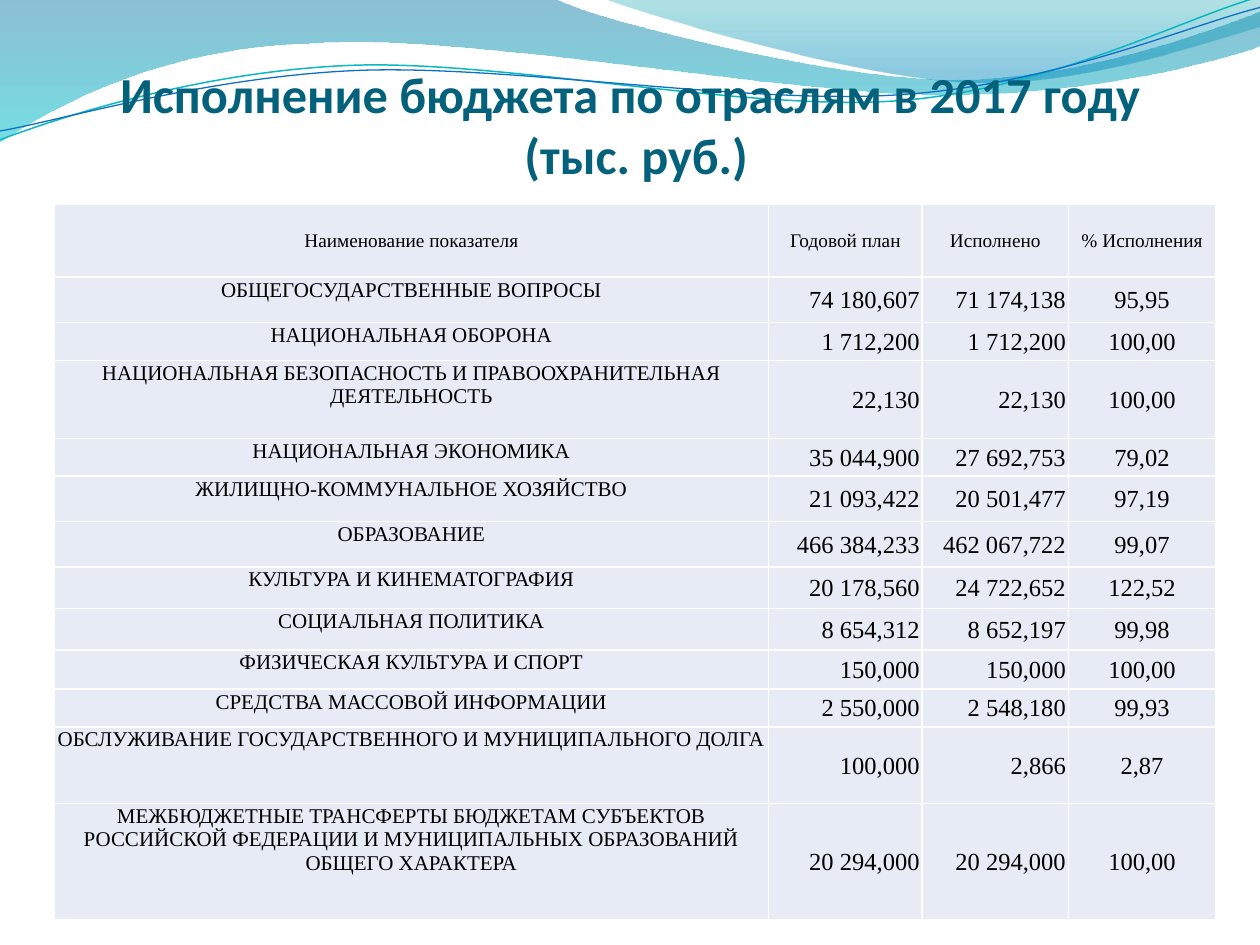
from math import cos, radians, sin

from lxml.etree import SubElement
from pptx import Presentation
from pptx.dml.color import RGBColor
from pptx.enum.text import MSO_ANCHOR, MSO_AUTO_SIZE, PP_ALIGN
from pptx.oxml.ns import qn
from pptx.util import Inches, Pt

TITLE_COLOR = RGBColor(0x04, 0x61, 0x7B)
CELL_FILL = RGBColor(0xE7, 0xEB, 0xF5)
BLACK = RGBColor(0, 0, 0)
DEEP_BLUE = RGBColor(0x00, 0x74, 0xA1)
TURQUOISE = RGBColor(0x00, 0xC6, 0xCF)
TEAL = RGBColor(0x00, 0xA1, 0xA9)
SKY = RGBColor(0x00, 0x8B, 0xBF)
LINE_TEAL = RGBColor(0x0A, 0xB8, 0xBF)
LINE_BLUE = RGBColor(0x0F, 0x6F, 0xC6)
TILT = -2.7  # degrees, clockwise

prs = Presentation()
prs.slide_width, prs.slide_height = Inches(10), Inches(7.5)
W, H = prs.slide_width, prs.slide_height
s = prs.slides.add_slide(prs.slide_layouts[5])


def add_outline(start, segments, closed):
    """Draw a path; a segment is one point (line) or three points (Bezier curve)."""
    points = [(Inches(x), Inches(y)) for seg in segments for x, y in seg]
    builder = s.shapes.build_freeform(Inches(start[0]), Inches(start[1]))
    builder.add_line_segments(points, close=closed)
    sp = builder.convert_to_shape()
    sp.shadow.inherit = False
    # Merge each triple of line ends into one Bezier curve
    corners = iter(list(sp._element.iter(qn("a:lnTo"))))
    for seg in segments:
        ends = [next(corners) for _ in seg]
        if len(seg) == 3:
            ends[0].tag = qn("a:cubicBezTo")
            for end in ends[1:]:
                ends[0].append(end[0])
                end.getparent().remove(end)
    return sp


def untilt(x, y):
    """Position of a point before the curves are tilted about their centre."""
    a, dx, dy = radians(-TILT), x - 5, y - 0.57
    return 5 + dx * cos(a) - dy * sin(a), 0.57 + dx * sin(a) + dy * cos(a)


# Translucent waves: start, segments, gradient stops (position, colour, opacity %)
waves = [
    ((0, 0),
     [[(4.4, -0.01)],
      [(4.76, 0.17), (6.64, 0.63), (7.58, 0.63)],
      [(8.53, 0.63), (9.58, 0.26), (10, 0.09)],
      [(10.01, 0.36)],
      [(9.83, 0.44), (8.7, 0.76), (7.46, 0.75)],
      [(6.22, 0.75), (3.82, 0.28), (2.57, 0.34)],
      [(1.29, 0.36), (0.46, 0.83), (-0.01, 1.13)]],
     [(0, DEEP_BLUE, 45), (1, TURQUOISE, 55)]),
    ((4.79, -0.01),
     [[(5.09, 0.11), (6.82, 0.62), (7.69, 0.65)],
      [(8.56, 0.69), (9.61, 0.32), (10, 0.21)],
      [(10, 0)]],
     [(0, TEAL, 30), (0.8, SKY, 45)]),
]
for start, segments, stops in waves:
    sp = add_outline(start, segments, True)
    sp.line.fill.background()
    sp.fill.gradient()
    sp.fill.gradient_angle = 270
    for stop, (position, color, _) in zip(sp.fill.gradient_stops, stops):
        stop.position, stop.color.rgb = position, color
    for clr, (_, _, opacity) in zip(sp._element.spPr.iter(qn("a:srgbClr")), stops):
        SubElement(clr, qn("a:alpha")).set("val", str(opacity * 1000))

# Thin tilted curves over the waves
curves = [
    ((0, 1.11),
     [[(0.48, 0.93), (1.58, 0.57), (2.77, 0.52)],
      [(3.95, 0.47), (5.93, 0.89), (7.13, 0.8)],
      [(8.33, 0.71), (9.38, 0.15), (9.98, -0.02)]], LINE_TEAL, 0.85),
    ((0, 1.04),
     [[(0.47, 0.96), (1.64, 0.61), (2.83, 0.56)],
      [(4.03, 0.51), (5.97, 0.84), (7.17, 0.75)],
      [(8.36, 0.67), (9.41, 0.21), (10, 0.06)]], LINE_BLUE, 0.75),
]
for start, segments, color, width in curves:
    level = [[untilt(*point) for point in seg] for seg in segments]
    sp = add_outline(untilt(*start), level, False)
    sp.rotation = TILT
    sp.fill.background()
    sp.line.color.rgb = color
    sp.line.width = Pt(width)

# Title, brought in front of the waves
title = s.shapes.title
s.shapes._spTree.append(title._element)
title.left, title.top = int(W * 0.051), int(H * 0.07)
title.width, title.height = int(W * 0.908), int(H * 0.125)
tf = title.text_frame
tf.text = "Исполнение бюджета по отраслям в 2017 году \v(тыс. руб.)"
tf.word_wrap = True
tf.auto_size = MSO_AUTO_SIZE.NONE
tf.vertical_anchor = MSO_ANCHOR.BOTTOM
tf.margin_left = tf.margin_right = tf.margin_bottom = 0
p = tf.paragraphs[0]
p.alignment = PP_ALIGN.CENTER
for r in p.runs:
    r.font.name, r.font.size, r.font.bold = "Calibri", Pt(28.8), True
    r.font.color.rgb = TITLE_COLOR

# Budget table: row height, then cell texts
rows = [
    (0.58, "Наименование показателя", "Годовой план", "Исполнено", "% Исполнения"),
    (0.36, "ОБЩЕГОСУДАРСТВЕННЫЕ ВОПРОСЫ", "74 180,607", "71 174,138", "95,95"),
    (0.3, "НАЦИОНАЛЬНАЯ ОБОРОНА", "1 712,200", "1 712,200", "100,00"),
    (0.62, "НАЦИОНАЛЬНАЯ БЕЗОПАСНОСТЬ И ПРАВООХРАНИТЕЛЬНАЯ ДЕЯТЕЛЬНОСТЬ",
     "22,130", "22,130", "100,00"),
    (0.3, "НАЦИОНАЛЬНАЯ ЭКОНОМИКА", "35 044,900", "27 692,753", "79,02"),
    (0.36, "ЖИЛИЩНО-КОММУНАЛЬНОЕ ХОЗЯЙСТВО", "21 093,422", "20 501,477", "97,19"),
    (0.36, "ОБРАЗОВАНИЕ", "466 384,233", "462 067,722", "99,07"),
    (0.33, "КУЛЬТУРА И КИНЕМАТОГРАФИЯ", "20 178,560", "24 722,652", "122,52"),
    (0.33, "СОЦИАЛЬНАЯ ПОЛИТИКА", "8 654,312", "8 652,197", "99,98"),
    (0.31, "ФИЗИЧЕСКАЯ КУЛЬТУРА И СПОРТ", "150,000", "150,000", "100,00"),
    (0.3, "СРЕДСТВА МАССОВОЙ ИНФОРМАЦИИ", "2 550,000", "2 548,180", "99,93"),
    (0.61, "ОБСЛУЖИВАНИЕ ГОСУДАРСТВЕННОГО И МУНИЦИПАЛЬНОГО ДОЛГА",
     "100,000", "2,866", "2,87"),
    (0.92, "МЕЖБЮДЖЕТНЫЕ ТРАНСФЕРТЫ БЮДЖЕТАМ СУБЪЕКТОВ РОССИЙСКОЙ ФЕДЕРАЦИИ "
     "И МУНИЦИПАЛЬНЫХ ОБРАЗОВАНИЙ ОБЩЕГО ХАРАКТЕРА", "20 294,000", "20 294,000", "100,00"),
]
col_widths = [5.67, 1.22, 1.16, 1.17]
table = s.shapes.add_table(
    len(rows), len(col_widths), Inches(0.43), Inches(1.62),
    Inches(sum(col_widths)), Inches(sum(row[0] for row in rows))).table
table.first_row = table.horz_banding = False
for column, width in zip(table.columns, col_widths):
    column.width = Inches(width)

for i, (height, *texts) in enumerate(rows):
    table.rows[i].height = Inches(height)
    for j, text in enumerate(texts):
        is_amount = i > 0 and j in (1, 2)
        is_label = i > 0 and j == 0
        cell = table.cell(i, j)
        cell.fill.solid()
        cell.fill.fore_color.rgb = CELL_FILL
        cell.margin_left = cell.margin_top = Inches(0.01)
        cell.margin_right = Inches(0.02 if is_amount else 0.01)
        cell.margin_bottom = 0
        cell.vertical_anchor = MSO_ANCHOR.TOP if is_label else MSO_ANCHOR.MIDDLE
        cell.text_frame.text = text
        p = cell.text_frame.paragraphs[0]
        p.alignment = PP_ALIGN.RIGHT if is_amount else PP_ALIGN.CENTER
        r = p.runs[0]
        r.font.name = "Times New Roman"
        r.font.size = Pt(11 if i == 0 else 12 if is_label else 14)
        r.font.color.rgb = BLACK

prs.save("out.pptx")
